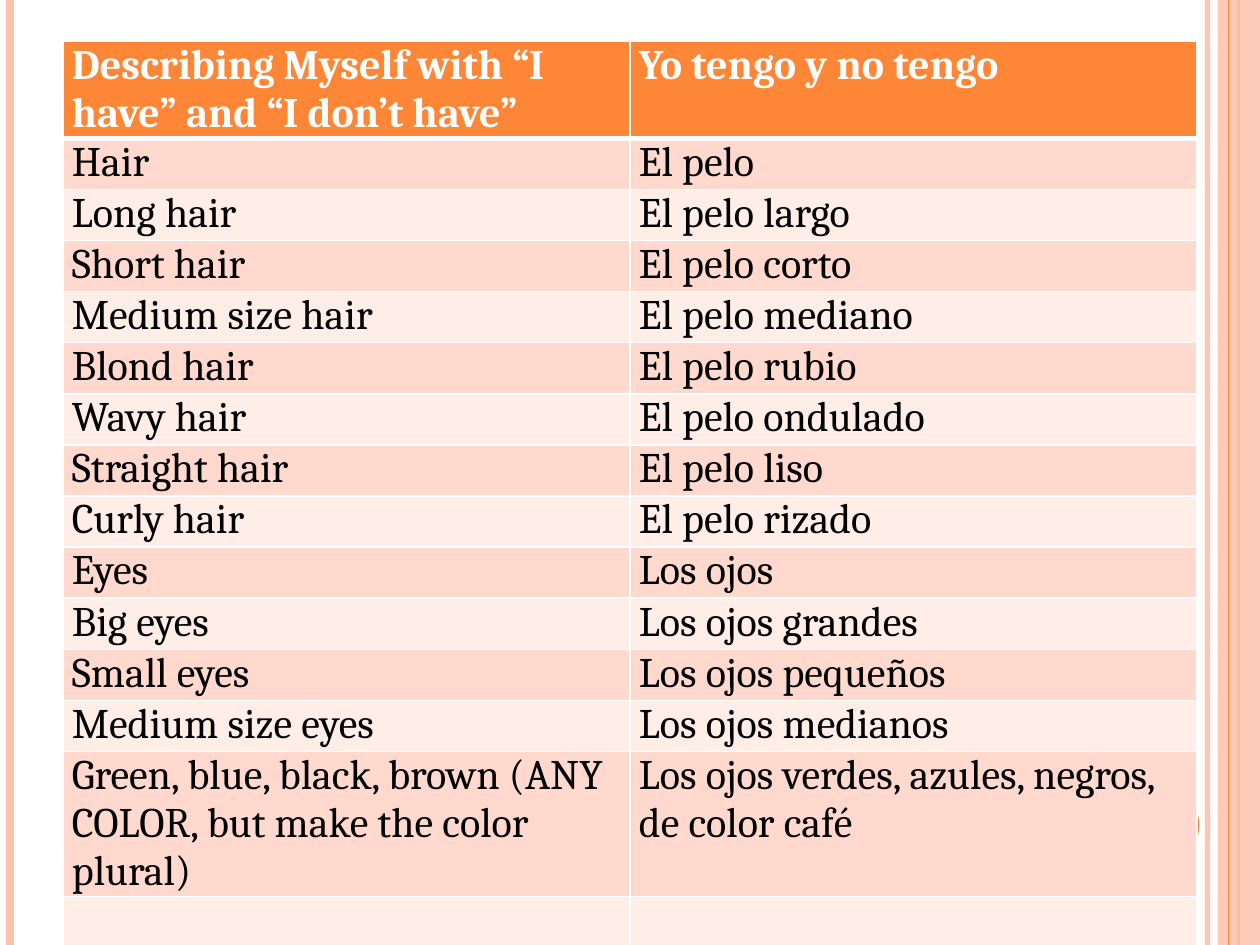
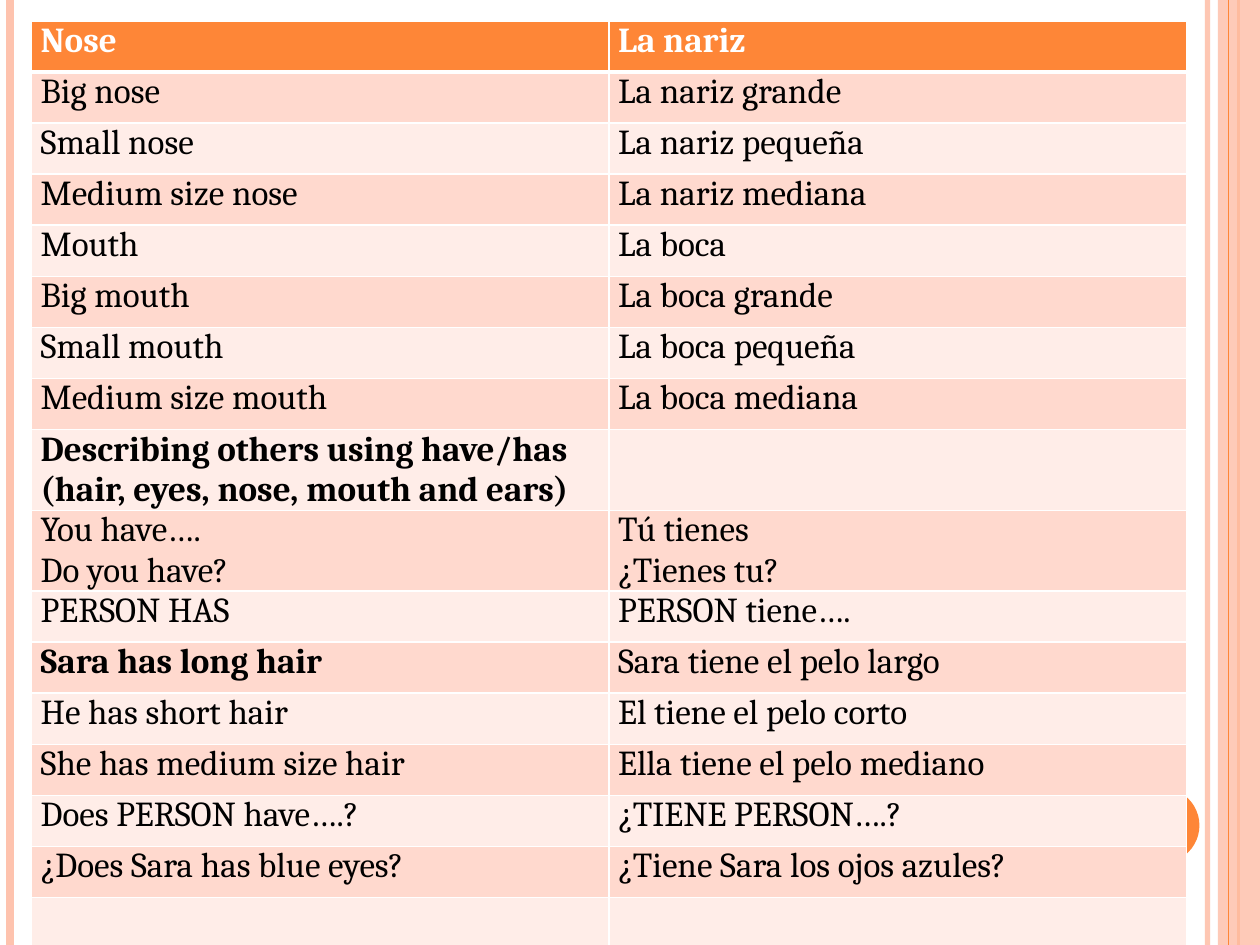
from dataclasses import dataclass

from pptx import Presentation
from pptx.dml.color import RGBColor
from pptx.enum.shapes import MSO_CONNECTOR, MSO_SHAPE
from pptx.oxml.ns import qn
from pptx.util import Cm, Pt
from lxml.etree import SubElement, Element


@dataclass(frozen=True)
class Theme:
    """Colours, font and type sizes shared by the slides."""
    accent: str = "FE8637"
    side: str = "FEC3AE"
    bands: tuple = ("FFEDE8", "FFD9CE")
    white: str = "FFFFFF"
    black: str = "000000"
    font: str = "Cambria"
    large: int = 24
    medium: int = 20


THEME = Theme()
SLIDE_WIDTH, SLIDE_HEIGHT = 25.4, 19.05
ROW_HEIGHT = 1.03

HAIR_AND_EYES = [
    ("Describing Myself with “I have” and “I don’t have”", "Yo tengo y no tengo"),
    ("Hair", "El pelo"),
    ("Long hair", "El pelo largo"),
    ("Short hair", "El pelo corto"),
    ("Medium size hair", "El pelo mediano"),
    ("Blond hair", "El pelo rubio"),
    ("Wavy hair", "El pelo ondulado"),
    ("Straight hair", "El pelo liso"),
    ("Curly hair", "El pelo rizado"),
    ("Eyes", "Los ojos"),
    ("Big eyes", "Los ojos grandes"),
    ("Small eyes", "Los ojos pequeños"),
    ("Medium size eyes", "Los ojos medianos"),
    ("Green, blue, black, brown (ANY COLOR, but make the color plural)",
     "Los ojos verdes, azules, negros, de color café"),
    ("", ""),
]

NOSE_AND_OTHERS = [
    ("Nose", "La nariz"),
    ("Big nose", "La nariz grande"),
    ("Small nose", "La nariz pequeña"),
    ("Medium size nose", "La nariz mediana"),
    ("Mouth", "La boca"),
    ("Big mouth", "La boca grande"),
    ("Small mouth", "La boca pequeña"),
    ("Medium size mouth", "La boca mediana"),
    ("Describing others using have/has (hair, eyes, nose, mouth and ears)", ""),
    ("You have….\nDo you have?", "Tú tienes\n¿Tienes tu?"),
    ("PERSON HAS", "PERSON tiene…."),
    ("Sara has long hair", "Sara tiene el pelo largo"),
    ("He has short hair", "El tiene el pelo corto"),
    ("She has medium size hair", "Ella tiene el pelo mediano"),
    ("Does PERSON have….?", "¿TIENE PERSON….?"),
    ("¿Does Sara has blue eyes?", "¿Tiene Sara los ojos azules?"),
    ("", ""),
]
BOLD_TEXTS = {NOSE_AND_OTHERS[8][0], "Sara has long hair"}


def rgb(color):
    return RGBColor.from_string(color)


def set_opacity(element, percent):
    color = element.find(".//" + qn("a:srgbClr"))
    SubElement(color, qn("a:alpha"), val=str(percent * 1000))


def add_vertical_line(slide, left, color, width, opacity=100):
    line = slide.shapes.add_connector(
        MSO_CONNECTOR.STRAIGHT, Cm(left), 0, Cm(left), Cm(SLIDE_HEIGHT))
    line.line.color.rgb = rgb(color)
    line.line.width = Pt(width)
    properties = line._element.spPr
    SubElement(properties, qn("a:effectLst"))
    if opacity < 100:
        set_opacity(properties, opacity)


def add_plain_shape(slide, kind, left, top, width, height, color):
    shape = slide.shapes.add_shape(kind, Cm(left), Cm(top), Cm(width), Cm(height))
    shape.shadow.inherit = False
    shape.fill.solid()
    shape.fill.fore_color.rgb = rgb(color)
    shape.line.fill.background()
    return shape


def add_frame(slide):
    add_vertical_line(slide, 24.34, THEME.side, 3, opacity=93)
    add_vertical_line(slide, 0.21, THEME.side, 4.5)
    add_vertical_line(slide, 24.97, THEME.accent, 1.5)
    band = add_plain_shape(slide, MSO_SHAPE.RECTANGLE, 24.55, 0,
                           SLIDE_WIDTH - 24.55, SLIDE_HEIGHT, THEME.side)
    set_opacity(band._element.spPr, 87)
    add_vertical_line(slide, 24.77, THEME.accent, 0.75)
    add_plain_shape(slide, MSO_SHAPE.OVAL, 22.66, 15.88, 1.52, 1.52, THEME.accent)


def set_borders(cell, row_index):
    top = 3 if row_index == 1 else 1
    bottom = 3 if row_index == 0 else 1
    sides = {"a:lnL": 1, "a:lnR": 1, "a:lnT": top, "a:lnB": bottom}
    properties = cell._tc.get_or_add_tcPr()
    for position, (tag, width) in enumerate(sides.items()):
        border = Element(qn(tag), w=str(Pt(width)))
        fill = SubElement(border, qn("a:solidFill"))
        SubElement(fill, qn("a:srgbClr"), val=THEME.white)
        properties.insert(position, border)


def fill_cell(cell, text, row_index, size):
    is_header = row_index == 0
    cell.margin_left = cell.margin_right = Cm(0.18)
    cell.margin_top = cell.margin_bottom = 0
    cell.fill.solid()
    cell.fill.fore_color.rgb = rgb(THEME.accent if is_header else THEME.bands[row_index % 2])
    set_borders(cell, row_index)
    cell.text = text
    for paragraph in cell.text_frame.paragraphs:
        font = paragraph.font
        font.name = THEME.font
        font.size = Pt(size)
        font.bold = is_header or text in BOLD_TEXTS
        font.color.rgb = rgb(THEME.white if is_header else THEME.black)


def add_vocabulary_table(slide, rows, left, top, column_width, size):
    frame = slide.shapes.add_table(
        len(rows), 2, Cm(left), Cm(top), Cm(2 * column_width), Cm(ROW_HEIGHT * len(rows)))
    table = frame.table
    table.horz_banding = False
    for column in table.columns:
        column.width = Cm(column_width)
    for row_index, texts in enumerate(rows):
        table.rows[row_index].height = Cm(ROW_HEIGHT)
        for column_index, text in enumerate(texts):
            fill_cell(table.cell(row_index, column_index), text, row_index, size)


def add_vocabulary_slide(presentation, rows, left, top, column_width, size):
    slide = presentation.slides.add_slide(presentation.slide_layouts[6])
    add_frame(slide)
    add_vocabulary_table(slide, rows, left, top, column_width, size)


def main():
    presentation = Presentation()
    presentation.slide_width = Cm(SLIDE_WIDTH)
    presentation.slide_height = Cm(SLIDE_HEIGHT)
    add_vocabulary_slide(presentation, HAIR_AND_EYES, 1.27, 0.84, 11.43, THEME.large)
    add_vocabulary_slide(presentation, NOSE_AND_OTHERS, 0.64, 0.42, 11.64, THEME.medium)
    presentation.save("out.pptx")


if __name__ == "__main__":
    main()
